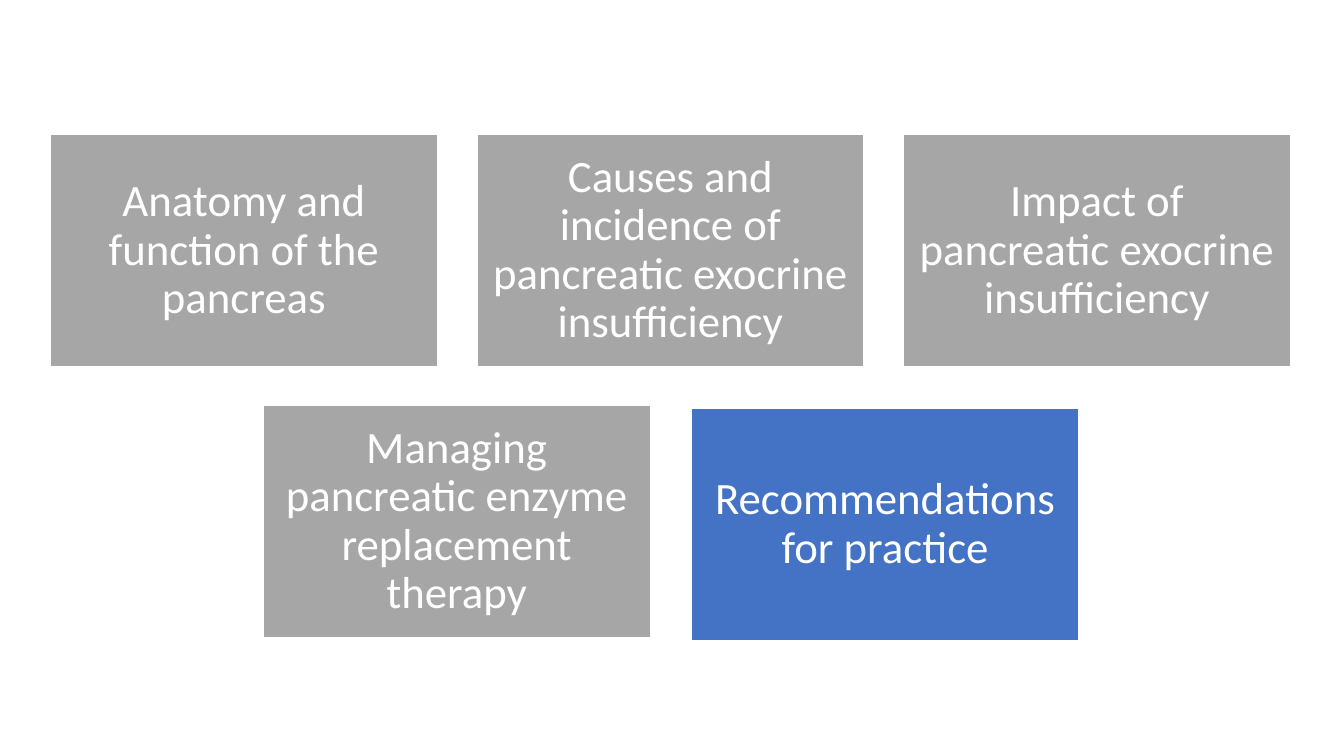
from pptx import Presentation
from pptx.dml.color import RGBColor
from pptx.enum import shapes, text
from pptx.util import Inches, Pt

COLOURS = {"topic": "A6A6A6", "current": "4472C4", "white": "FFFFFF"}
# Each row: left edge of its first box, top, topics
ROWS = [
    (0.5, 1.33, [
        "Anatomy and function of the pancreas",
        "Causes and incidence of pancreatic exocrine insufficiency",
        "Impact of pancreatic exocrine insufficiency",
    ]),
    (2.61, 4.02, [
        "Managing pancreatic enzyme replacement therapy",
        "Recommendations for practice",
    ]),
]
CURRENT_TOPIC = "Recommendations for practice"
CURRENT_SHIFT = (0.02, 0.03)
BOX_WIDTH, BOX_HEIGHT, GAP = 3.84, 2.31, 0.39
MARGIN = 0.13


def colour(name):
    return RGBColor.from_string(COLOURS[name])


def add_topic(slide, topic, left, top, fill):
    shape = slide.shapes.add_shape(
        shapes.MSO_SHAPE.RECTANGLE, Inches(left), Inches(top),
        Inches(BOX_WIDTH), Inches(BOX_HEIGHT))
    shape.shadow.inherit = False
    shape.fill.solid()
    shape.fill.fore_color.rgb = colour(fill)
    shape.line.color.rgb = colour("white")
    shape.line.width = Pt(1)

    frame = shape.text_frame
    frame.word_wrap = True
    frame.vertical_anchor = text.MSO_ANCHOR.MIDDLE
    frame.margin_left = frame.margin_right = Inches(MARGIN)
    frame.margin_top = frame.margin_bottom = Inches(MARGIN)
    frame.text = topic
    paragraph = frame.paragraphs[0]
    paragraph.alignment = text.PP_ALIGN.CENTER
    paragraph.line_spacing = 0.9
    font = paragraph.runs[0].font
    font.name = "Calibri"
    font.size = Pt(32)
    font.color.rgb = colour("white")


def main():
    presentation = Presentation()
    presentation.slide_width = Inches(13.33)
    presentation.slide_height = Inches(7.5)
    slide = presentation.slides.add_slide(presentation.slide_layouts[6])

    for row_left, top, topics in ROWS:
        for column, topic in enumerate(topics):
            is_current = topic == CURRENT_TOPIC
            shift_x, shift_y = CURRENT_SHIFT if is_current else (0, 0)
            left = row_left + column * (BOX_WIDTH + GAP)
            add_topic(slide, topic, left + shift_x, top + shift_y,
                      "current" if is_current else "topic")

    presentation.save("out.pptx")


if __name__ == "__main__":
    main()
